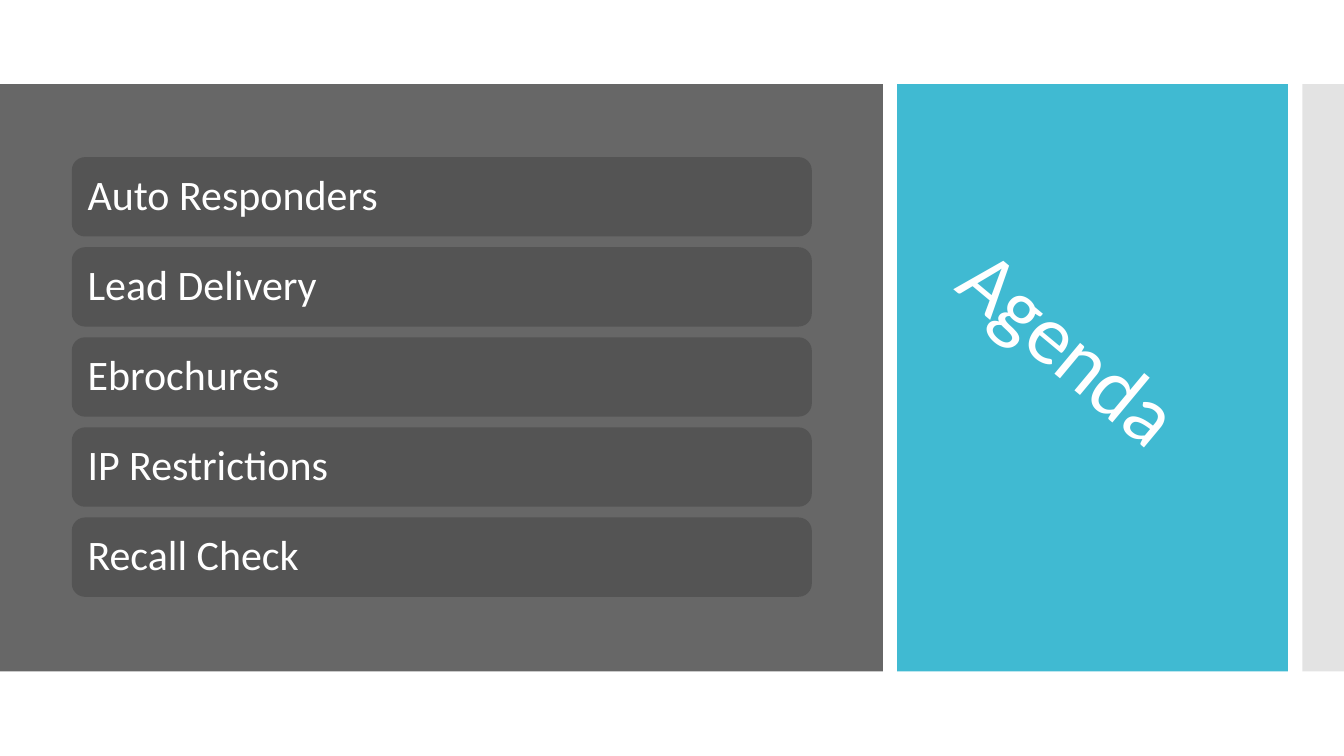
from lxml import etree
from pptx import Presentation
from pptx.dml.color import RGBColor
from pptx.enum.shapes import MSO_SHAPE
from pptx.enum.text import MSO_ANCHOR, MSO_AUTO_SIZE, PP_ALIGN
from pptx.oxml.ns import qn
from pptx.util import Cm, Pt

RECT, ROUNDED = MSO_SHAPE.RECTANGLE, MSO_SHAPE.ROUNDED_RECTANGLE
MIDDLE, LEFT, NO_FIT = MSO_ANCHOR.MIDDLE, PP_ALIGN.LEFT, MSO_AUTO_SIZE.NONE

COLORS = {"white": "FFFFFF", "panel": "676767", "item": "545454",
          "accent": "40BAD2", "strip": "C8C8C8"}
FONT = "Calibri"
SLIDE_W, SLIDE_H = 33.87, 19.05
BAND_TOP, BAND_H = 2.12, 14.8
TOPICS = ["Auto Responders", "Lead Delivery", "Ebrochures",
          "IP Restrictions", "Recall Check"]


def add_block(slide, kind, box, color):
    """Add a filled, borderless shape; box is left, top, width, height in cm."""
    block = slide.shapes.add_shape(kind, *map(Cm, box))
    block.shadow.inherit = False
    block.fill.solid()
    block.fill.fore_color.rgb = RGBColor.from_string(COLORS[color])
    block.line.fill.background()
    return block


def write_text(frame, text, size):
    """Write one left-aligned white line, centred vertically."""
    frame.word_wrap = True
    frame.auto_size = NO_FIT
    frame.vertical_anchor = MIDDLE
    line = frame.paragraphs[0]
    line.alignment = LEFT
    line.line_spacing = 0.9
    run = line.add_run()
    run.text = text
    run.font.name = FONT
    run.font.size = Pt(size)
    run.font.color.rgb = RGBColor.from_string(COLORS["white"])
    return run


def add_topics(slide, box):
    """Grey panel with evenly spaced topic bars."""
    left, top, width, _ = box
    add_block(slide, RECT, box, "panel")
    bar_h, pitch = 2, 2.27
    for row, topic in enumerate(TOPICS):
        bar_box = (left + 1.81, top + 1.84 + row * pitch, width - 3.6, bar_h)
        bar = add_block(slide, ROUNDED, bar_box, "item")
        bar.text_frame.margin_left = bar.text_frame.margin_right = Cm(0.3)
        write_text(bar.text_frame, topic, 30)


def add_heading(slide, box):
    """Accent panel with the slanted title on top of it."""
    left, top, _, _ = box
    add_block(slide, RECT, box, "accent")
    title = slide.shapes.title
    title.left, title.top = Cm(left + 0.71), Cm(top + 5.93)
    title.width, title.height = Cm(8.18), Cm(2.34)
    title.rotation = 39.8
    run = write_text(title.text_frame, "Agenda", 60)
    run.font._element.set("spc", "-60")
    # Bring the title in front of its panel
    slide.shapes._spTree.append(title._element)


def add_edge_strip(slide, box):
    """Half-transparent strip at the right edge."""
    strip = add_block(slide, RECT, box, "strip")
    color = strip._element.spPr.find(qn("a:solidFill"))[0]
    etree.SubElement(color, qn("a:alpha"), val="50000")


def main():
    prs = Presentation()
    prs.slide_width, prs.slide_height = Cm(SLIDE_W), Cm(SLIDE_H)
    slide = prs.slides.add_slide(prs.slide_layouts[5])
    slide.background.fill.solid()
    slide.background.fill.fore_color.rgb = RGBColor.from_string(COLORS["white"])

    add_topics(slide, (0, BAND_TOP, 22.25, BAND_H))
    add_heading(slide, (22.61, BAND_TOP, 9.85, BAND_H))
    add_edge_strip(slide, (32.82, BAND_TOP, SLIDE_W - 32.82, BAND_H))
    prs.save("out.pptx")


if __name__ == "__main__":
    main()
